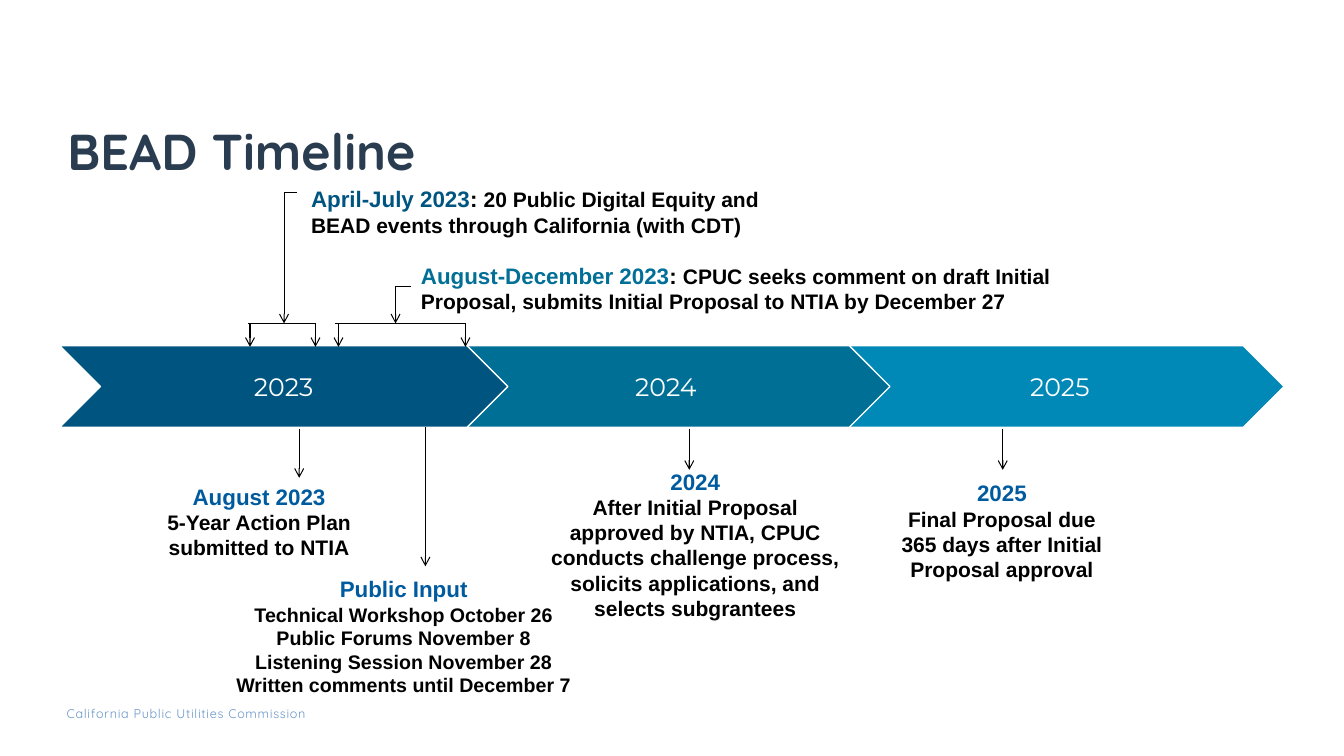
from lxml import etree
from pptx import Presentation
from pptx.dml.color import RGBColor
from pptx.enum.shapes import MSO_CONNECTOR, MSO_SHAPE
from pptx.enum.text import MSO_ANCHOR, PP_ALIGN
from pptx.oxml.ns import qn
from pptx.util import Cm, Pt

LEFT, CENTER = PP_ALIGN.LEFT, PP_ALIGN.CENTER
TOP, MIDDLE, BOTTOM = MSO_ANCHOR.TOP, MSO_ANCHOR.MIDDLE, MSO_ANCHOR.BOTTOM
STRAIGHT, ELBOW = MSO_CONNECTOR.STRAIGHT, MSO_CONNECTOR.ELBOW
CHEVRON = MSO_SHAPE.CHEVRON

BLACK = RGBColor(0x00, 0x00, 0x00)
WHITE = RGBColor(0xFF, 0xFF, 0xFF)
SLATE = RGBColor(0x2A, 0x3C, 0x50)
PALE_BLUE = RGBColor(0x69, 0x96, 0xC9)
HEADING_BLUE = RGBColor(0x00, 0x5B, 0x9E)
NAVY = RGBColor(0x00, 0x55, 0x80)
TEAL = RGBColor(0x00, 0x6F, 0x95)
DRAFT_TEAL = RGBColor(0x01, 0x6F, 0x96)
SKY = RGBColor(0x00, 0x88, 0xB7)

YEARS = [("2025", 21.06, SKY), ("2024", 11.13, TEAL), ("2023", 1.5, NAVY)]
BAND_TOP, BAND_WIDTH, BAND_HEIGHT = 8.71, 11.3, 2.06
BRACKET_TOP = 8.15
BRACKETS = [(6.25, 6.3, 7.95), (8.43, 8.53, 11.73)]
ELBOWS = [(7.49, 4.85, 7.16), (10.36, 7.21, 9.97)]
DROPS = [(7.54, 10.8, 12.04), (10.72, 10.77, 14.27),
         (17.37, 10.8, 11.84), (25.27, 10.8, 11.84)]

CALLOUTS = [
    (7.59, 4.55, 12.04, "April-July 2023", NAVY,
     "20 Public Digital Equity and BEAD events through California (with CDT)"),
    (10.36, 6.48, 16.46, "August-December 2023", DRAFT_TEAL,
     "CPUC seeks comment on draft Initial Proposal, submits Initial Proposal "
     "to NTIA by December 27"),
]
MILESTONES = [
    (3.94, 12.04, 5.18, 2.24, "August 2023", 15,
     ["5-Year Action Plan submitted to NTIA"]),
    (5.64, 14.38, 9.07, 3.33, "Public Input", 14,
     ["Technical Workshop October 26 Public Forums November 8 "
      "Listening Session November 28",
      "Written comments until December 7"]),
    (13.61, 11.66, 7.82, 4.14, "2024", 15,
     ["After Initial Proposal approved by NTIA, CPUC conducts challenge "
      "process, solicits applications, and selects subgrantees"]),
    (22.28, 11.96, 5.94, 2.95, "2025", 15,
     ["Final Proposal due 365 days after Initial Proposal approval"]),
]


def style(font, size, color, name="Arial", bold=True):
    """Set the face, size, colour and weight of a font."""
    font.name, font.size, font.bold = name, Pt(size), bold
    font.color.rgb = color


def add_box(slide, left, top, width, height, anchor=TOP):
    """Add a wrapping text box and return its text frame."""
    frame = slide.shapes.add_textbox(
        Cm(left), Cm(top), Cm(width), Cm(height)).text_frame
    frame.word_wrap = True
    frame.vertical_anchor = anchor
    return frame


def add_line(slide, start, end, width=0.75, arrow=True, kind=STRAIGHT):
    """Add a thin black connector, with an open arrowhead if wanted."""
    line = slide.shapes.add_connector(kind, *map(Cm, start + end))
    line.line.color.rgb = BLACK
    line.line.width = Pt(width)
    if arrow:
        etree.SubElement(line.line._get_or_add_ln(), qn("a:tailEnd"), type="arrow")
    properties = line._element.spPr
    etree.SubElement(properties, qn("a:effectLst"))
    if kind == ELBOW:
        properties.find(qn("a:prstGeom")).set("prst", "bentConnector2")


def add_year(slide, year, left, color):
    """Add one chevron of the timeline band."""
    band = slide.shapes.add_shape(
        CHEVRON, Cm(left), Cm(BAND_TOP), Cm(BAND_WIDTH), Cm(BAND_HEIGHT))
    band.shadow.inherit = False
    band.fill.solid()
    band.fill.fore_color.rgb = color
    band.line.color.rgb = WHITE
    band.line.width = Pt(1)
    band.text_frame.vertical_anchor = MIDDLE
    para = band.text_frame.paragraphs[0]
    para.text = year
    para.alignment = CENTER
    style(para.font, 18, WHITE, "Montserrat", False)


def add_bracket(slide, left, first, last):
    """Add a horizontal bar with an arrow down to the band at both dates."""
    add_line(slide, (left, BRACKET_TOP), (last, BRACKET_TOP), 0.5, False)
    for x in (first, last):
        add_line(slide, (x, BRACKET_TOP), (x, BAND_TOP + 0.03))


def add_callout(slide, left, top, width, dates, color, message):
    """Add a dated note above the band."""
    para = add_box(slide, left, top, width, 1.57).paragraphs[0]
    para.alignment = LEFT
    for text, size, tint in ((dates, 16, color), (": ", 16, BLACK),
                             (message, 15, BLACK)):
        span = para.add_run()
        span.text = text
        style(span.font, size, tint)


def add_milestone(slide, left, top, width, height, heading, size, details):
    """Add a centred heading and its details below the band."""
    frame = add_box(slide, left, top, width, height)
    for index, text in enumerate([heading] + details):
        para = frame.add_paragraph() if index else frame.paragraphs[0]
        para.text = text
        para.alignment = CENTER
        style(para.font, size if index else 16, BLACK if index else HEADING_BLUE)


def add_title(slide):
    """Add the slide title."""
    frame = add_box(slide, 1.7, 1.02, 30.48, 3.68, BOTTOM)
    frame.margin_left = 0
    para = frame.paragraphs[0]
    para.text = "BEAD Timeline"
    para.line_spacing = 0.9
    style(para.font, 36, SLATE, "Quicksand")


def add_footer(slide):
    """Add the letter-spaced name at the foot of the slide."""
    frame = add_box(slide, 1.68, 17.78, 8.15, 0.38)
    frame.margin_left = frame.margin_right = 0
    frame.margin_top = frame.margin_bottom = 0
    span = frame.paragraphs[0].add_run()
    span.text = "California Public Utilities Commission"
    style(span.font, 9, PALE_BLUE, "Quicksand", False)
    span.font._element.set("spc", "50")


def main():
    """Build the timeline slide and save it."""
    deck = Presentation()
    deck.slide_width, deck.slide_height = Cm(33.87), Cm(19.05)
    page = deck.slides.add_slide(deck.slide_layouts[6])
    add_footer(page)
    add_title(page)
    for year in YEARS:
        add_year(page, *year)
    for bracket in BRACKETS:
        add_bracket(page, *bracket)
    for start, top, end in ELBOWS:
        add_line(page, (start, top), (end, BRACKET_TOP), kind=ELBOW)
    for x, top, bottom in DROPS:
        add_line(page, (x, top), (x, bottom))
    for callout in CALLOUTS:
        add_callout(page, *callout)
    for milestone in MILESTONES:
        add_milestone(page, *milestone)
    deck.save("out.pptx")


if __name__ == "__main__":
    main()
